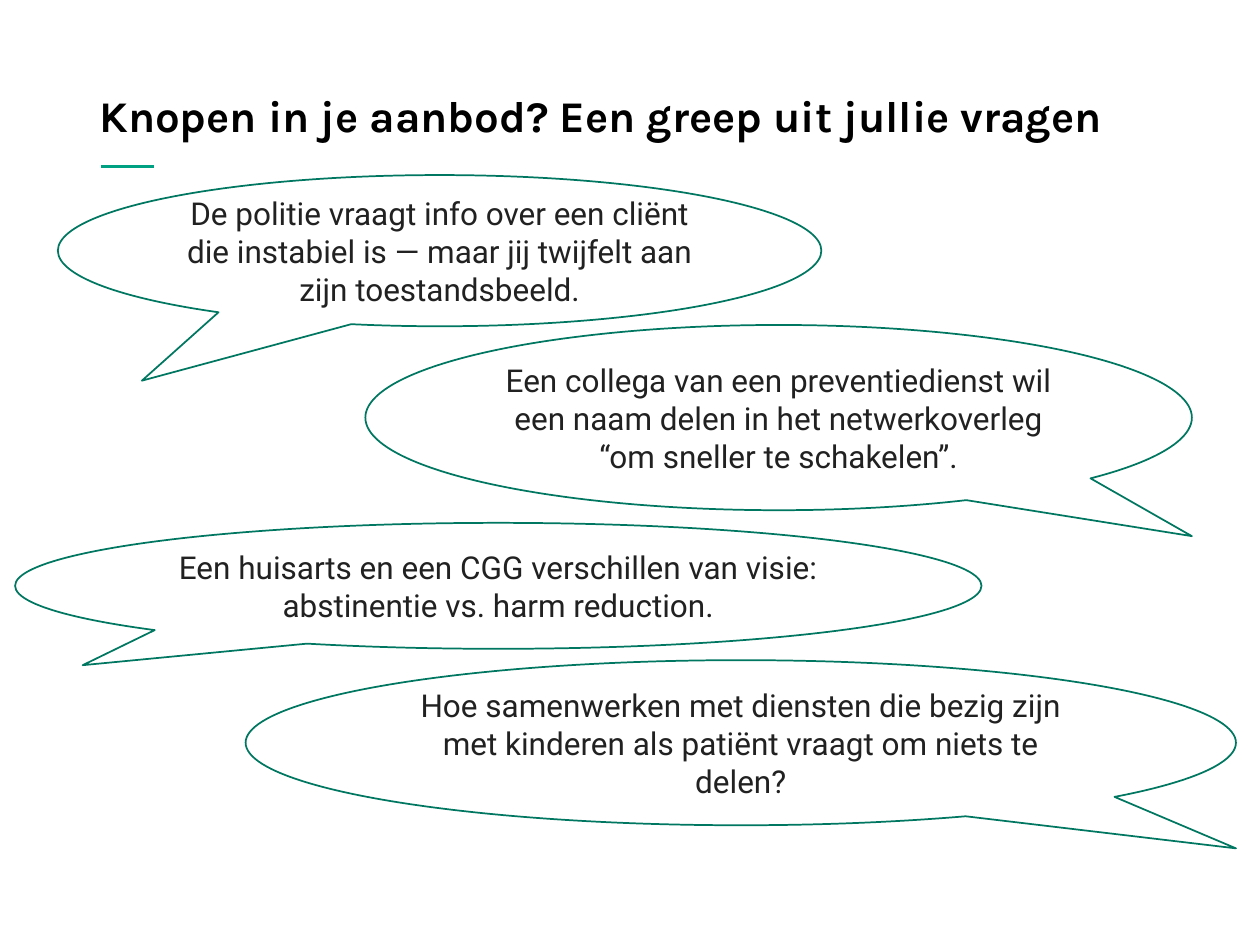
import pptx
import pptx.util
from pptx.dml.color import RGBColor
from pptx.enum.shapes import MSO_CONNECTOR, MSO_SHAPE
from pptx.enum.text import MSO_ANCHOR, PP_ALIGN
from pptx.oxml.ns import qn
import lxml.etree

# Content: places are percentages of the slide's width and height
TITLE = "Knopen in je aanbod? Een greep uit jullie vragen"
TITLE_BOX = (7.9, 3.2, 84.3, 11.87)
ACCENT_LINE = (8, 17.6, 12.2, 17.6)

# Question, box, tail tip relative to the bubble's centre
QUESTIONS = [
    ("De politie vraagt info over een cliënt die instabiel is — maar jij twijfelt aan zijn toestandsbeeld.",
     (4.6, 18.53, 60.6, 16), (-0.39, 0.86)),
    ("Een collega van een preventiedienst wil een naam delen in het netwerkoverleg “om sneller te schakelen”.",
     (29, 34.4, 65.6, 19.6), (0.5, 0.64)),
    ("Een huisarts en een CGG verschillen van visie: abstinentie vs. harm reduction.",
     (1.2, 55.33, 76.7, 13.33), (-0.43, 0.63)),
    ("Hoe samenwerken met diensten die bezig zijn met kinderen als patiënt vraagt om niets te delen?",
     (19.5, 69.87, 78.6, 17.47), (0.5, 0.64)),
]

THEME = {
    "title": {"font": "Karla", "size": 25, "color": "000000", "bold": True},
    "body": {"font": "Roboto", "size": 18, "color": "212121", "bold": False},
    "accent": ("00A183", 2),
    "outline": ("007761", 1),
}

prs = pptx.Presentation()
prs.slide_width = pptx.util.Inches(10)
prs.slide_height = pptx.util.Inches(7.5)
slide = prs.slides.add_slide(prs.slide_layouts[6])


def place(shares):
    sizes = (prs.slide_width, prs.slide_height) * 2
    return [round(size * share / 100) for size, share in zip(sizes, shares)]


def style_line(line, style):
    color, width = style
    line.color.rgb = RGBColor.from_string(color)
    line.width = pptx.util.Pt(width)


def set_text(tf, text, style, anchor, align):
    tf.text = text
    tf.word_wrap = True
    tf.vertical_anchor = anchor
    p = tf.paragraphs[0]
    p.alignment = align
    font = p.runs[0].font
    font.name = style["font"]
    font.size = pptx.util.Pt(style["size"])
    font.bold = style["bold"]
    font.color.rgb = RGBColor.from_string(style["color"])


# Accent line under the title
rule = slide.shapes.add_connector(MSO_CONNECTOR.STRAIGHT, *place(ACCENT_LINE))
style_line(rule.line, THEME["accent"])
lxml.etree.SubElement(rule._element.spPr, qn("a:effectLst"))

# Title
tf = slide.shapes.add_textbox(*place(TITLE_BOX)).text_frame
tf.margin_left = tf.margin_top = tf.margin_right = tf.margin_bottom = 0
set_text(tf, TITLE, THEME["title"], MSO_ANCHOR.BOTTOM, PP_ALIGN.LEFT)
tf.paragraphs[0].line_spacing = 0.95

# Speech bubbles
for question, box, tail in QUESTIONS:
    sp = slide.shapes.add_shape(MSO_SHAPE.OVAL_CALLOUT, *place(box))
    sp.adjustments[0], sp.adjustments[1] = tail
    sp.shadow.inherit = False
    sp.fill.background()
    style_line(sp.line, THEME["outline"])
    set_text(sp.text_frame, question, THEME["body"], MSO_ANCHOR.MIDDLE, PP_ALIGN.CENTER)

prs.save("out.pptx")
